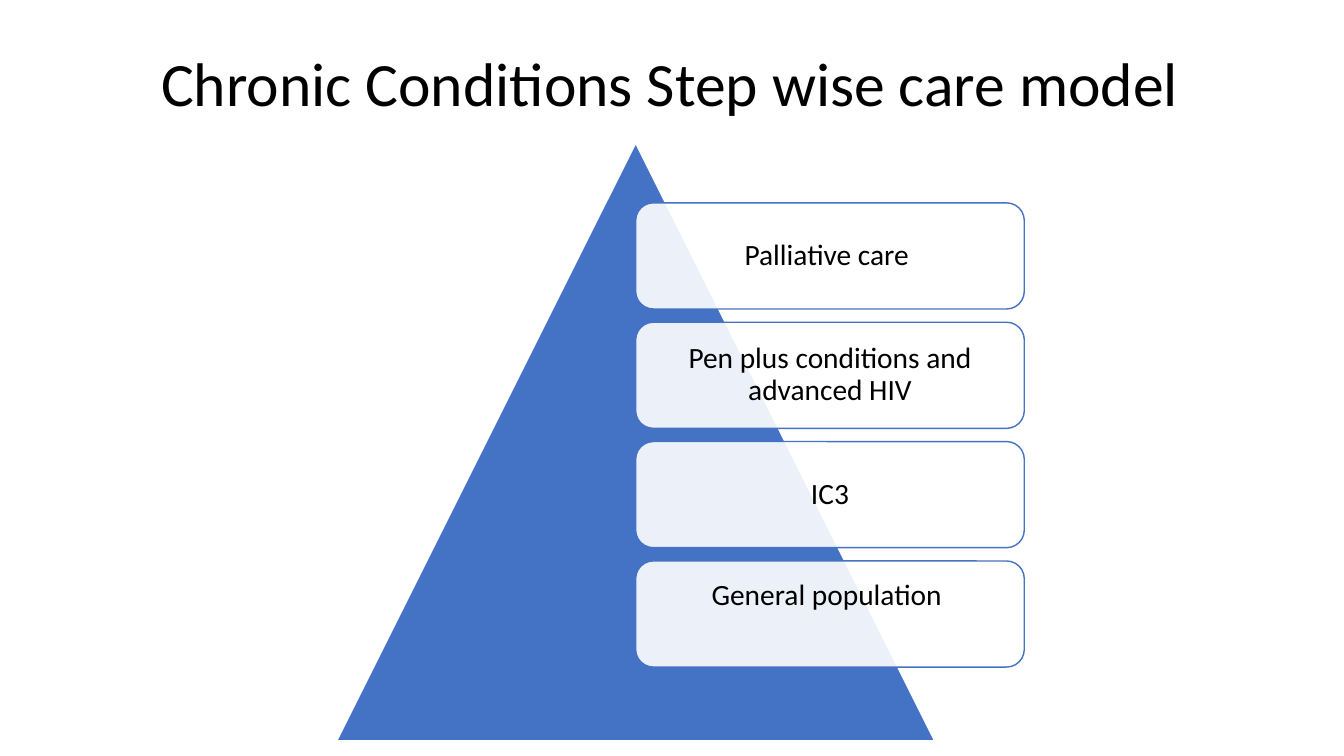
from pptx import Presentation
from pptx.dml.color import RGBColor
from pptx.enum.shapes import MSO_SHAPE as Shape
from pptx.enum.text import MSO_ANCHOR as Anchor, PP_ALIGN as Align
from pptx.oxml.ns import qn
from pptx.util import Inches, Pt
from lxml import etree

BLACK = RGBColor(0x00, 0x00, 0x00)
WHITE = RGBColor(0xFF, 0xFF, 0xFF)
BLUE = RGBColor(0x44, 0x72, 0xC4)

LEVELS = [
    ("Palliative care ", Anchor.MIDDLE),
    ("Pen plus conditions and advanced HIV", Anchor.MIDDLE),
    ("IC3", Anchor.MIDDLE),
    ("General population ", Anchor.TOP),
]


def write(box, text, size, align=Align.LEFT, anchor=Anchor.MIDDLE, inset=0.1):
    """Write one formatted paragraph into a shape."""
    frame = box.text_frame
    frame.word_wrap = True
    frame.vertical_anchor = anchor
    frame.margin_left = frame.margin_right = Inches(inset)
    frame.margin_top = frame.margin_bottom = Inches(inset)
    para = frame.paragraphs[0]
    para.alignment = align
    para.line_spacing = 0.9
    span = para.add_run()
    span.text = text
    span.font.name = "Calibri"
    span.font.size = Pt(size)
    span.font.color.rgb = BLACK


def add_block(page, kind, left, top, width, height, fill, line, opacity=100):
    """Add a filled and outlined shape without a shadow."""
    block = page.shapes.add_shape(
        kind, Inches(left), Inches(top), Inches(width), Inches(height))
    block.shadow.inherit = False
    block.fill.solid()
    block.fill.fore_color.rgb = fill
    block.line.color.rgb = line
    block.line.width = Pt(1)
    if opacity < 100:
        color = block.fill._xPr.find(qn("a:solidFill"))[0]
        etree.SubElement(color, qn("a:alpha")).set("val", str(opacity * 1000))
    return block


def add_title(page, left, top, width, height):
    """Place the slide title."""
    box = page.shapes.add_textbox(
        Inches(left), Inches(top), Inches(width), Inches(height))
    write(box, "Chronic Conditions Step wise care model", 44)


def add_pyramid(page, left, top, side):
    """Draw the triangle and stack the care levels from its centre line."""
    add_block(page, Shape.ISOSCELES_TRIANGLE, left, top, side, side, BLUE, WHITE)
    width, height = side * 0.65, side * 0.1775
    step = height * 1.125
    for row, (label, anchor) in enumerate(LEVELS):
        level = add_block(
            page, Shape.ROUNDED_RECTANGLE, left + side / 2,
            top + side * 0.1 + row * step, width, height, WHITE, BLUE, opacity=90)
        write(level, label, 21, Align.CENTER, anchor, inset=0.14)


def main():
    """Build and save the slide."""
    deck = Presentation()
    deck.slide_width, deck.slide_height = Inches(13.33), Inches(7.5)
    page = deck.slides.add_slide(deck.slide_layouts[6])
    add_title(page, 1.5, 0.3, 10.5, 1.12)
    add_pyramid(page, 3.34, 1.42, 5.93)
    deck.save("out.pptx")


if __name__ == "__main__":
    main()
